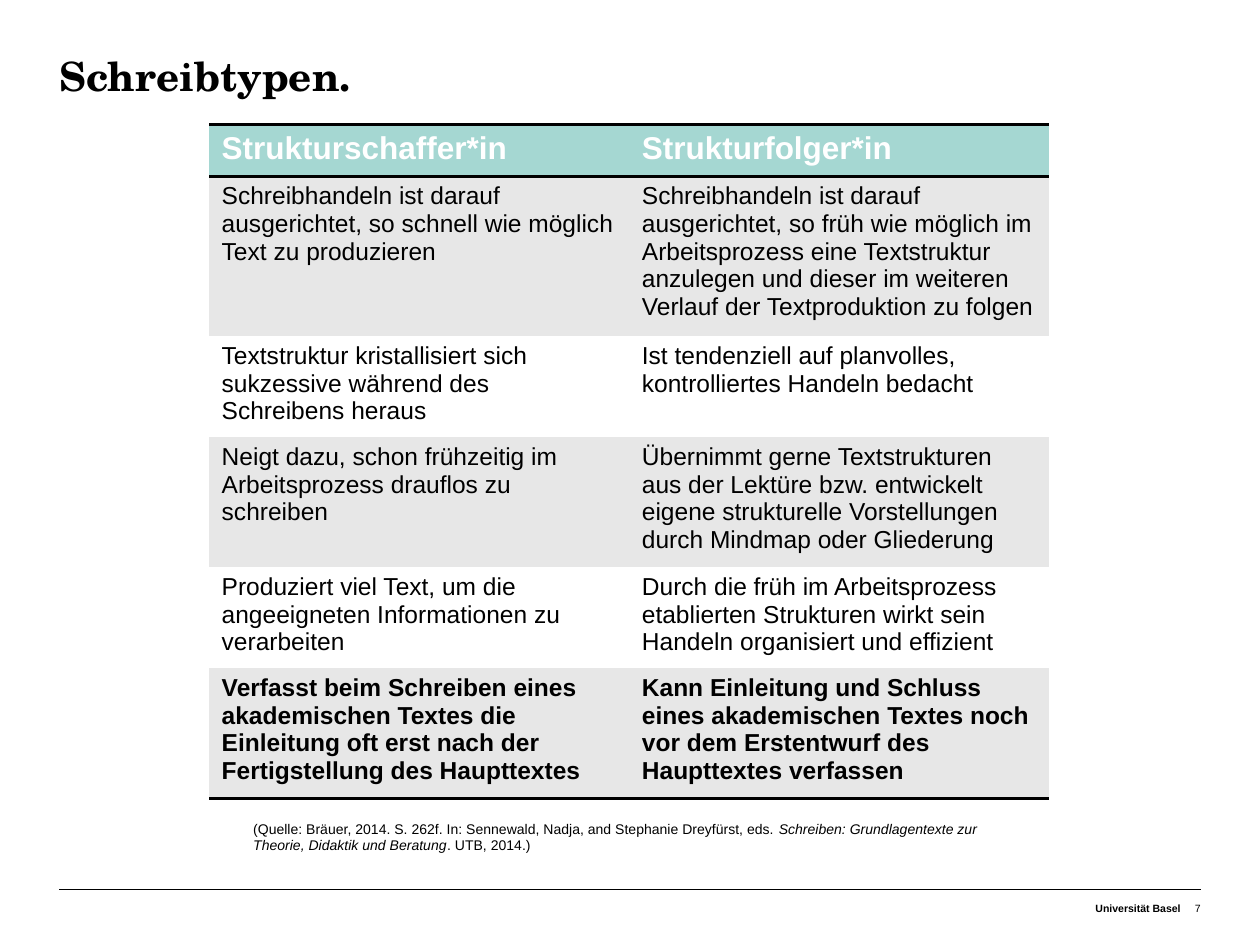
from lxml import etree
from pptx import Presentation
from pptx.dml.color import RGBColor
from pptx.enum.text import MSO_ANCHOR as Anchor, PP_ALIGN as Align
from pptx.oxml.ns import qn
from pptx.util import Inches, Pt

BLACK, WHITE, MINT, GREY = "000000", "FFFFFF", "A5D7D2", "E7E7E7"
NO_STYLE = "{2D5ABB26-0587-4C30-8999-92F81FD0307C}"

ROWS = [
    ("Strukturschaffer*in", "Strukturfolger*in"),
    ("Schreibhandeln ist darauf ausgerichtet, so schnell wie möglich "
     "Text zu produzieren",
     "Schreibhandeln ist darauf ausgerichtet, so früh wie möglich im "
     "Arbeitsprozess eine Textstruktur anzulegen und dieser im weiteren "
     "Verlauf der Textproduktion zu folgen"),
    ("Textstruktur kristallisiert sich sukzessive während des Schreibens "
     "heraus",
     "Ist tendenziell auf planvolles, kontrolliertes Handeln bedacht"),
    ("Neigt dazu, schon frühzeitig im Arbeitsprozess drauflos zu schreiben",
     "Übernimmt gerne Textstrukturen aus der Lektüre bzw. entwickelt eigene "
     "strukturelle Vorstellungen durch Mindmap oder Gliederung"),
    ("Produziert viel Text, um die angeeigneten Informationen zu verarbeiten",
     "Durch die früh im Arbeitsprozess etablierten Strukturen wirkt sein "
     "Handeln organisiert und effizient"),
    ("Verfasst beim Schreiben eines akademischen Textes die Einleitung oft "
     "erst nach der Fertigstellung des Haupttextes",
     "Kann Einleitung und Schluss eines akademischen Textes noch vor dem "
     "Erstentwurf des Haupttextes verfassen"),
]


def color(code):
    return RGBColor.from_string(code)


class Deck:
    font = "Arial"
    serif = "TeX Gyre Schola"

    def __init__(self, wide, high):
        self.prs = Presentation()
        self.prs.slide_width, self.prs.slide_height = Inches(wide), Inches(high)
        self.slide = self.prs.slides.add_slide(self.prs.slide_layouts[5])

    def run(self, para, text, size, bold=False, italic=False, tint=BLACK, font=None):
        run = para.add_run()
        run.text = text
        face = run.font
        face.name, face.size = font or self.font, Pt(size)
        face.bold, face.italic = bold, italic
        face.color.rgb = color(tint)

    def frame(self, shape, top=0):
        frame = shape.text_frame
        frame.word_wrap = True
        frame.vertical_anchor = Anchor.TOP
        frame.margin_left = frame.margin_right = frame.margin_bottom = 0
        frame.margin_top = Inches(top)
        return frame.paragraphs[0]

    def title(self, text, x, y, w, h):
        shape = self.slide.shapes.title
        shape.left, shape.top = Inches(x), Inches(y)
        shape.width, shape.height = Inches(w), Inches(h)
        para = self.frame(shape)
        para.alignment, para.line_spacing = Align.LEFT, Pt(25)
        self.run(para, text, 23, bold=True, font=self.serif)

    def text(self, x, y, w, h, top=0, align=Align.LEFT):
        box = self.slide.shapes.add_textbox(Inches(x), Inches(y), Inches(w), Inches(h))
        para = self.frame(box, top)
        para.alignment = align
        return para

    def line(self, x, y, end):
        rule = self.slide.shapes.add_connector(1, Inches(x), Inches(y), Inches(end), Inches(y))
        rule.line.color.rgb, rule.line.width = color(BLACK), Pt(0.25)
        etree.SubElement(rule._element.spPr, qn("a:effectLst"))

    def edge(self, cell, side):
        props = cell._tc.get_or_add_tcPr()
        line = etree.SubElement(props, qn("a:ln" + side), w=str(Pt(2)))
        fill = etree.SubElement(line, qn("a:solidFill"))
        etree.SubElement(fill, qn("a:srgbClr"), val=BLACK)

    def table(self, rows, x, y, w, h, row_h):
        shape = self.slide.shapes.add_table(
            len(rows), len(rows[0]), Inches(x), Inches(y), Inches(w), Inches(h))
        grid = shape.table
        grid._tbl.tblPr.find(qn("a:tableStyleId")).text = NO_STYLE
        last = len(rows) - 1
        for i, texts in enumerate(rows):
            grid.rows[i].height = Inches(row_h)
            head = i == 0
            sides = "TB" if head else "B" if i == last else ""
            back = MINT if head else GREY if i % 2 else WHITE
            for j, text in enumerate(texts):
                cell = grid.cell(i, j)
                # Borders come before the fill in the cell properties
                for side in sides:
                    self.edge(cell, side)
                cell.fill.solid()
                cell.fill.fore_color.rgb = color(back)
                self.run(cell.text_frame.paragraphs[0], text, 18 if head else 14,
                         bold=i in (0, last), tint=WHITE if head else BLACK)
        shape.height = Inches(h)


def main():
    deck = Deck(10, 7.5)

    # Footer: rule, school and page number
    deck.line(0.47, 7.06, 9.53)
    school = deck.text(7.28, 7.14, 2.09, 0.2, top=0.02, align=Align.RIGHT)
    deck.run(school, "Universität Basel", 6, bold=True)
    page = deck.text(9.37, 7.14, 0.16, 0.2, top=0.02, align=Align.RIGHT)
    deck.run(page, "7", 6)

    # Title and comparison
    deck.title("Schreibtypen.", 0.47, 0.44, 9.06, 0.83)
    deck.table(ROWS, 1.66, 0.99, 6.67, 5.34, 0.41)

    # Source
    cite = deck.text(2.01, 6.51, 6.17, 0.23)
    deck.run(cite, "(Quelle: Bräuer, 2014. S. 262f. In: Sennewald, Nadja, and "
                   "Stephanie Dreyfürst, eds. ", 8)
    deck.run(cite, "Schreiben: Grundlagentexte zur Theorie, Didaktik und Beratung",
             8, italic=True)
    deck.run(cite, ". UTB, 2014.)", 8)

    deck.prs.save("out.pptx")


if __name__ == "__main__":
    main()
